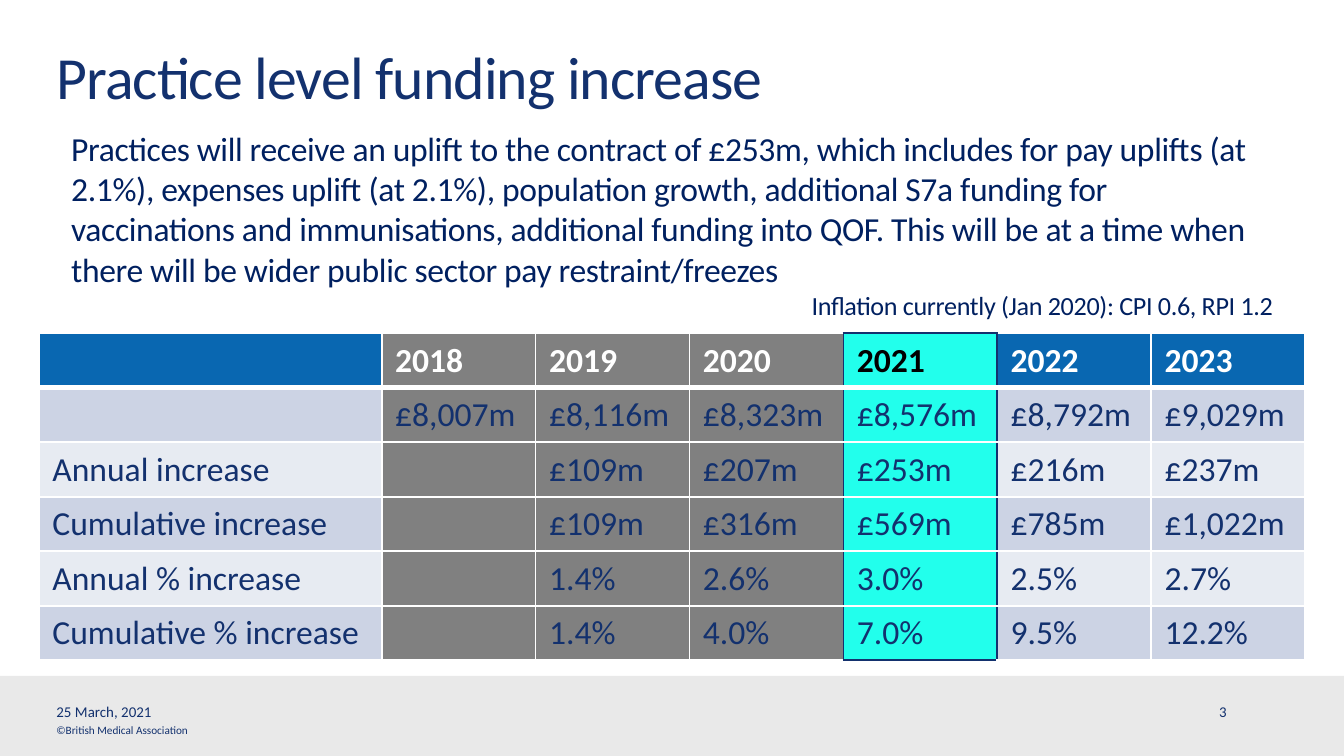
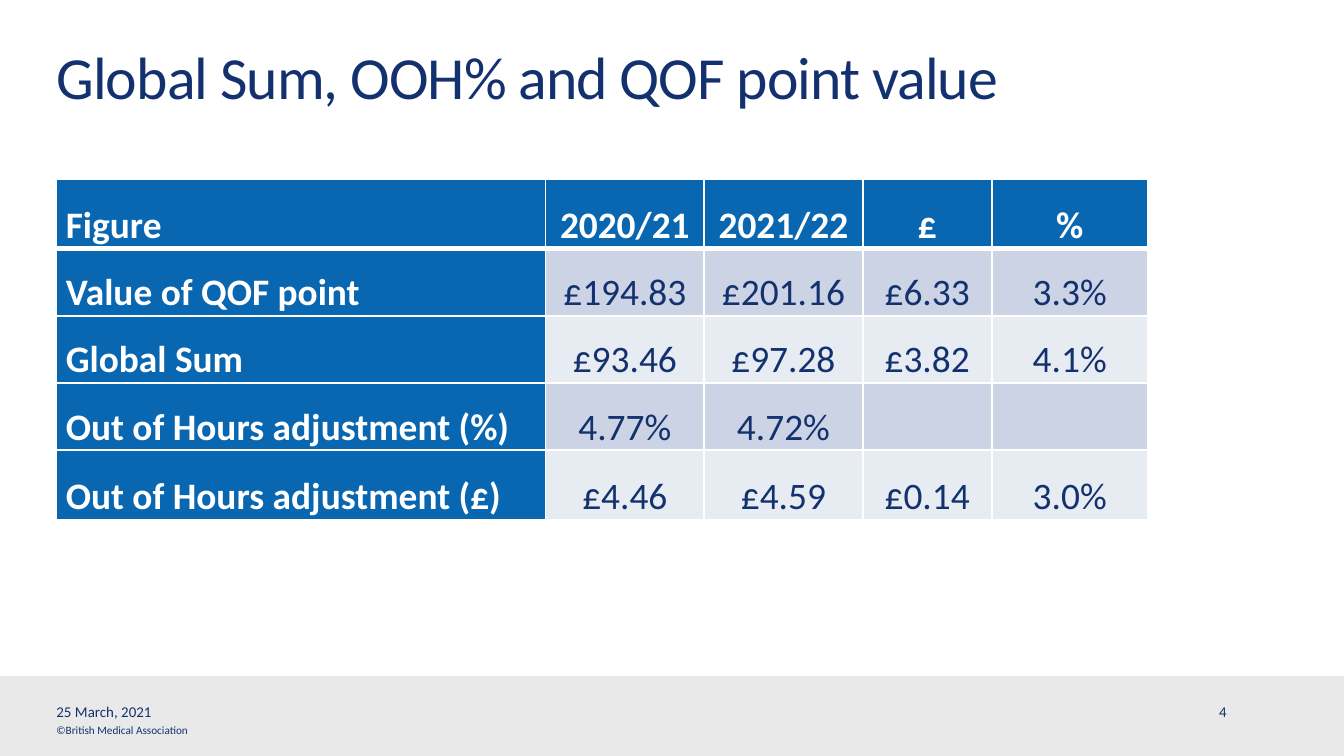
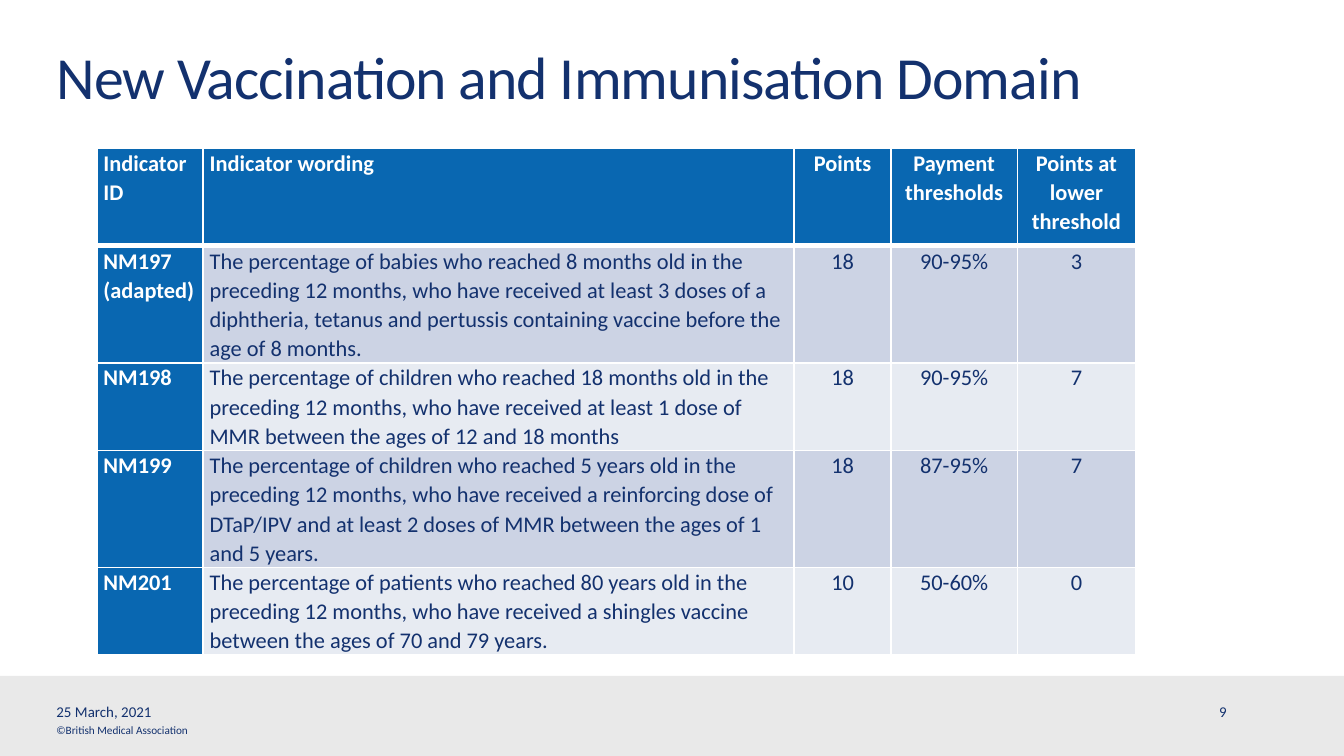
from lxml import etree
from pptx import Presentation
from pptx import util as u
from pptx.dml.color import RGBColor
from pptx.enum import shapes, text
from pptx.oxml import ns

INK = {"navy": "13316E", "deep": "002060", "blue": "0967B1", "band": "E9E9E9",
       "dark": "CCD3E4", "pale": "E7EBF2", "past": "808080", "now": "22FFEC",
       "white": "FFFFFF", "black": "000000"}
HUE = {name: RGBColor.from_string(code) for name, code in INK.items()}
LEFT, MID = text.PP_ALIGN.LEFT, text.PP_ALIGN.CENTER
TOP, HALF, LOW = text.MSO_ANCHOR.TOP, text.MSO_ANCHOR.MIDDLE, text.MSO_ANCHOR.BOTTOM


def put(para, words, size, hue, bold=False, gap=0, **form):
    for key, val in form.items():
        setattr(para, key, val)
    run = para.add_run()
    run.text = words
    for key, val in {"name": "Calibri", "size": u.Pt(size), "bold": bold}.items():
        setattr(run.font, key, val)
    run.font.color.rgb = HUE[hue]
    if gap:
        run._r.get_or_add_rPr().set("spc", str(gap))


def frame(shape, spot, anchor=TOP):
    for key, val in zip(("left", "top", "width", "height"), spot):
        setattr(shape, key, u.Inches(val))
    area = shape.text_frame
    look = {"margin_left": 0, "margin_top": 0, "margin_right": 0, "margin_bottom": 0,
            "word_wrap": True, "auto_size": text.MSO_AUTO_SIZE.NONE,
            "vertical_anchor": anchor}
    for key, val in look.items():
        setattr(area, key, val)
    return area


PAGES = [
    {"title": "Practice level funding increase", "num": "3",
     "body": "Practices will receive an uplift to the contract of £253m, which includes for pay "
             "uplifts (at 2.1%), expenses uplift (at 2.1%), population growth, additional S7a "
             "funding for vaccinations and immunisations, additional funding into QOF. This will "
             "be at a time when there will be wider public sector pay restraint/freezes",
     "note": "Inflation currently (Jan 2020): CPI 0.6, RPI 1.2",
     "at": (0.29, 2.48), "cols": [2.55] + [6.87 / 6] * 6, "rows": [2.43 / 6] * 6,
     "size": 18, "inset": (0.1, 0.05), "anchor": TOP, "line": None,
     "left": 7, "side": False, "past": (1, 2, 3), "now": 4,
     "data": [
         ["", "2018", "2019", "2020", "2021", "2022", "2023"],
         ["", "£8,007m", "£8,116m", "£8,323m", "£8,576m", "£8,792m", "£9,029m"],
         ["Annual increase", "", "£109m", "£207m", "£253m", "£216m", "£237m"],
         ["Cumulative increase", "", "£109m", "£316m", "£569m", "£785m", "£1,022m"],
         ["Annual % increase", "", "1.4%", "2.6%", "3.0%", "2.5%", "2.7%"],
         ["Cumulative % increase", "", "1.4%", "4.0%", "7.0%", "9.5%", "12.2%"]]},
    {"title": "Global Sum, OOH% and QOF point value", "num": "4",
     "at": (0.42, 1.33), "cols": [3.64, 1.18, 1.18, 0.96, 1.16],
     "rows": [0.52, 0.5, 0.5, 0.5, 0.52],
     "size": 20, "inset": (0.07, 0), "anchor": LOW, "line": None,
     "left": 1, "side": True, "past": (), "now": None,
     "data": [
         ["Figure", "2020/21", "2021/22", "£", "%"],
         ["Value of QOF point", "£194.83", "£201.16", "£6.33", "3.3%"],
         ["Global Sum", "£93.46", "£97.28", "£3.82", "4.1%"],
         ["Out of Hours adjustment (%)", "4.77%", "4.72%", "", ""],
         ["Out of Hours adjustment (£)", "£4.46", "£4.59", "£0.14", "3.0%"]]},
    {"title": "New Vaccination and Immunisation Domain", "num": "9",
     "at": (0.72, 1.1), "cols": [0.79, 4.4, 0.72, 0.94, 0.88],
     "rows": [0.73, 0.87, 0.65, 0.87, 0.65],
     "size": 12, "inset": (0.05, 0), "anchor": TOP, "line": 1.07,
     "left": 2, "side": True, "past": (), "now": None,
     "data": [
         ["Indicator ID", "Indicator wording", "Points", "Payment thresholds",
          "Points at lower threshold"],
         ["NM197 (adapted)",
          "The percentage of babies who reached 8 months old in the preceding 12 months, who have "
          "received at least 3 doses of a diphtheria, tetanus and pertussis containing vaccine "
          "before the age of 8 months.", "18", "90-95%", "3"],
         ["NM198",
          "The percentage of children who reached 18 months old in the preceding 12 months, who "
          "have received at least 1 dose of MMR between the ages of 12 and 18 months",
          "18", "90-95%", "7"],
         ["NM199",
          "The percentage of children who reached 5 years old in the preceding 12 months, who have "
          "received a reinforcing dose of DTaP/IPV and at least 2 doses of MMR between the ages of "
          "1 and 5 years.", "18", "87-95%", "7"],
         ["NM201",
          "The percentage of patients who reached 80 years old in the preceding 12 months, who have "
          "received a shingles vaccine between the ages of 70 and 79 years.",
          "10", "50-60%", "0"]]},
]

deck = Presentation()
deck.slide_width, deck.slide_height = u.Inches(10), u.Inches(5.625)

for page in PAGES:
    slide = deck.slides.add_slide(deck.slide_layouts[5])
    band = slide.shapes.add_shape(shapes.MSO_SHAPE.RECTANGLE, u.Inches(0), u.Inches(5.03),
                                  u.Inches(10), u.Inches(0.6))
    band.shadow.inherit = False
    band.fill.solid()
    band.fill.fore_color.rgb = HUE["band"]
    band.line.fill.background()

    area = frame(slide.shapes.title, (0.42, 0.36, 7.73, 0.54))
    put(area.paragraphs[0], page["title"], 32, "navy", gap=-50, alignment=LEFT,
        line_spacing=u.Pt(34))

    for words, size, spot in (("©British Medical Association", 6, (0.42, 5.38, 2.07, 0.1)),
                              ("25 March, 2021", 8, (0.42, 5.23, 3.17, 0.13)),
                              (page["num"], 8, (9.07, 5.23, 0.28, 0.13))):
        area = frame(slide.shapes.add_textbox(0, 0, 0, 0), spot, HALF)
        put(area.paragraphs[0], words, size, "navy")

    if "body" in page:
        area = frame(slide.shapes.add_textbox(0, 0, 0, 0), (0.53, 0.95, 8.94, 1.46))
        put(area.paragraphs[0], page["body"], 18, "deep", gap=-20)
        put(area.add_paragraph(), page["note"], 14, "deep", gap=-20,
            alignment=text.PP_ALIGN.RIGHT, space_after=u.Pt(12))

    cols, rows, now = page["cols"], page["rows"], page["now"]
    grid = slide.shapes.add_table(len(rows), len(cols), *map(u.Inches, page["at"]),
                                  u.Inches(sum(cols)), u.Inches(sum(rows))).table
    for col, wide in zip(grid.columns, cols):
        col.width = u.Inches(wide)
    for row, high in zip(grid.rows, rows):
        row.height = u.Inches(high)

    for r, line in enumerate(page["data"]):
        for c, words in enumerate(line):
            cell = grid.cell(r, c)
            head = r == 0 or (page["side"] and c == 0)
            mark = now is not None and c == now
            edge = {"L": mark or (now is not None and c == now + 1),
                    "R": mark or (now is not None and c == now - 1),
                    "T": mark and r == 0,
                    "B": mark and r == len(rows) - 1}
            for side, dark in edge.items():
                wide = 3 if r == 0 and side == "B" else 1
                pen = etree.SubElement(cell._tc.get_or_add_tcPr(), ns.qn("a:ln" + side),
                                       w=str(u.Pt(wide)))
                fill = etree.SubElement(pen, ns.qn("a:solidFill"))
                etree.SubElement(fill, ns.qn("a:srgbClr"), val=INK["navy" if dark else "white"])

            if mark:
                shade = "now"
            elif c in page["past"]:
                shade = "past"
            elif head:
                shade = "blue"
            else:
                shade = "dark" if r % 2 else "pale"
            cell.fill.solid()
            cell.fill.fore_color.rgb = HUE[shade]

            if words:
                flat, tall = map(u.Inches, page["inset"])
                look = {"margin_left": flat, "margin_right": flat, "margin_top": tall,
                        "margin_bottom": tall, "vertical_anchor": page["anchor"]}
                for key, val in look.items():
                    setattr(cell, key, val)
                hue = ("black" if mark else "white") if head else "navy"
                put(cell.text_frame.paragraphs[0], words, page["size"], hue, head,
                    alignment=LEFT if c < page["left"] else MID, line_spacing=page["line"])

deck.save("out.pptx")
